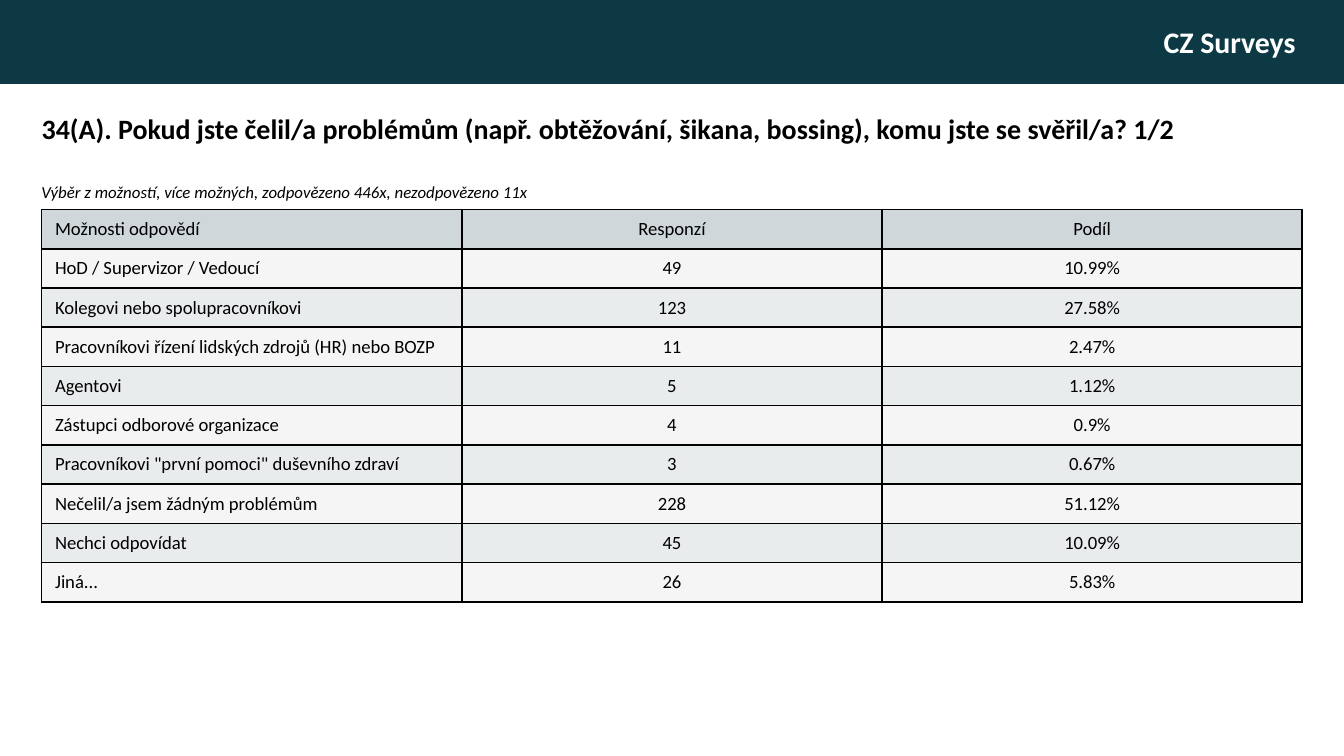
from lxml import etree
from pptx import Presentation
from pptx import util as u
from pptx.dml.color import RGBColor
from pptx.enum import shapes, text
from pptx.oxml import ns

TEAL = RGBColor(0x0D, 0x39, 0x44)
HEADING = RGBColor(0xCF, 0xD7, 0xDA)
BANDS = (RGBColor(0xE8, 0xEC, 0xED), RGBColor(0xF5, 0xF5, 0xF5))
BLACK = RGBColor(0, 0, 0)
WHITE = RGBColor(0xFF, 0xFF, 0xFF)
LEFT, CENTER, RIGHT = text.PP_ALIGN.LEFT, text.PP_ALIGN.CENTER, text.PP_ALIGN.RIGHT

BRAND = "CZ Surveys"
QUESTION = ("34(A). Pokud jste čelil/a problémům (např. obtěžování, šikana, bossing), "
            "komu jste se svěřil/a? 1/2")
NOTE = "Výběr z možností, více možných, zodpovězeno 446x, nezodpovězeno 11x"
ANSWERS = [
    ("Možnosti odpovědí", "Responzí", "Podíl"),
    ("HoD / Supervizor / Vedoucí", "49", "10.99%"),
    ("Kolegovi nebo spolupracovníkovi", "123", "27.58%"),
    ("Pracovníkovi řízení lidských zdrojů (HR) nebo BOZP", "11", "2.47%"),
    ("Agentovi", "5", "1.12%"),
    ("Zástupci odborové organizace", "4", "0.9%"),
    ('Pracovníkovi "první pomoci" duševního zdraví', "3", "0.67%"),
    ("Nečelil/a jsem žádným problémům", "228", "51.12%"),
    ("Nechci odpovídat", "45", "10.09%"),
    ("Jiná...", "26", "5.83%"),
]


def write(frame, words, *, size, color=BLACK, bold=False, italic=False, align=LEFT):
    """Put one formatted paragraph into a text frame."""
    frame.word_wrap = True
    paragraph = frame.paragraphs[0]
    paragraph.alignment = align
    run = paragraph.add_run()
    run.text = words
    font = run.font
    font.name, font.size, font.bold, font.italic = "Calibri", u.Pt(size), bold, italic
    font.color.rgb = color


def add_header(slide, left, top, width, height):
    """Draw the coloured band with the brand at its right end."""
    band = slide.shapes.add_shape(shapes.MSO_SHAPE.RECTANGLE, left, top, width, height)
    band.shadow.inherit = False
    band.fill.solid()
    band.fill.fore_color.rgb = TEAL
    band.line.fill.background()
    band.text_frame.margin_right = u.Inches(0.36)
    band.text_frame.vertical_anchor = text.MSO_ANCHOR.MIDDLE
    write(band.text_frame, BRAND, size=16, color=WHITE, bold=True, align=RIGHT)


def add_question(slide, left, top, width, height):
    """Place the survey question in the title and the note below it."""
    question = slide.shapes.title
    question.left, question.top, question.width, question.height = left, top, width, height
    question.text_frame.auto_size = text.MSO_AUTO_SIZE.NONE
    question.text_frame.vertical_anchor = text.MSO_ANCHOR.TOP
    write(question.text_frame, QUESTION, size=15, bold=True)
    note = slide.shapes.add_textbox(left, top + height, u.Inches(4.17), u.Inches(0.62))
    write(note.text_frame, NOTE, size=9, italic=True)


def add_borders(cell):
    """Give a cell thin black lines on all four sides."""
    properties = cell._tc.get_or_add_tcPr()
    for index, side in enumerate(("a:lnL", "a:lnR", "a:lnT", "a:lnB")):
        line = etree.Element(ns.qn(side), w=str(u.Pt(1)))
        fill = etree.SubElement(line, ns.qn("a:solidFill"))
        etree.SubElement(fill, ns.qn("a:srgbClr"), val=str(BLACK))
        properties.insert(index, line)


def add_answers(slide, left, top, width, height):
    """Build the banded table of answers in equal rows and columns."""
    answers = slide.shapes.add_table(
        len(ANSWERS), len(ANSWERS[0]), left, top, width, height).table
    for row, values in enumerate(ANSWERS):
        for column, value in enumerate(values):
            cell = answers.cell(row, column)
            cell.margin_left = u.Inches(0 if column else 0.1)
            cell.margin_right = cell.margin_top = cell.margin_bottom = 0
            cell.vertical_anchor = text.MSO_ANCHOR.MIDDLE
            cell.fill.solid()
            cell.fill.fore_color.rgb = BANDS[row % 2] if row else HEADING
            add_borders(cell)
            write(cell.text_frame, value, size=10, align=CENTER if column else LEFT)


def main():
    """Build and save the survey slide."""
    deck = Presentation()
    deck.slide_width = u.Inches(10)
    deck.slide_height = deck.slide_width * 9 // 16
    slide = deck.slides.add_slide(deck.slide_layouts[5])
    add_header(slide, 0, 0, deck.slide_width, deck.slide_height // 9)
    add_question(slide, u.Inches(0.21), u.Inches(0.78), u.Inches(9.58), u.Inches(0.52))
    add_answers(slide, u.Inches(0.31), u.Inches(1.56), u.Inches(9.38), u.Inches(2.92))
    deck.save("out.pptx")


if __name__ == "__main__":
    main()
